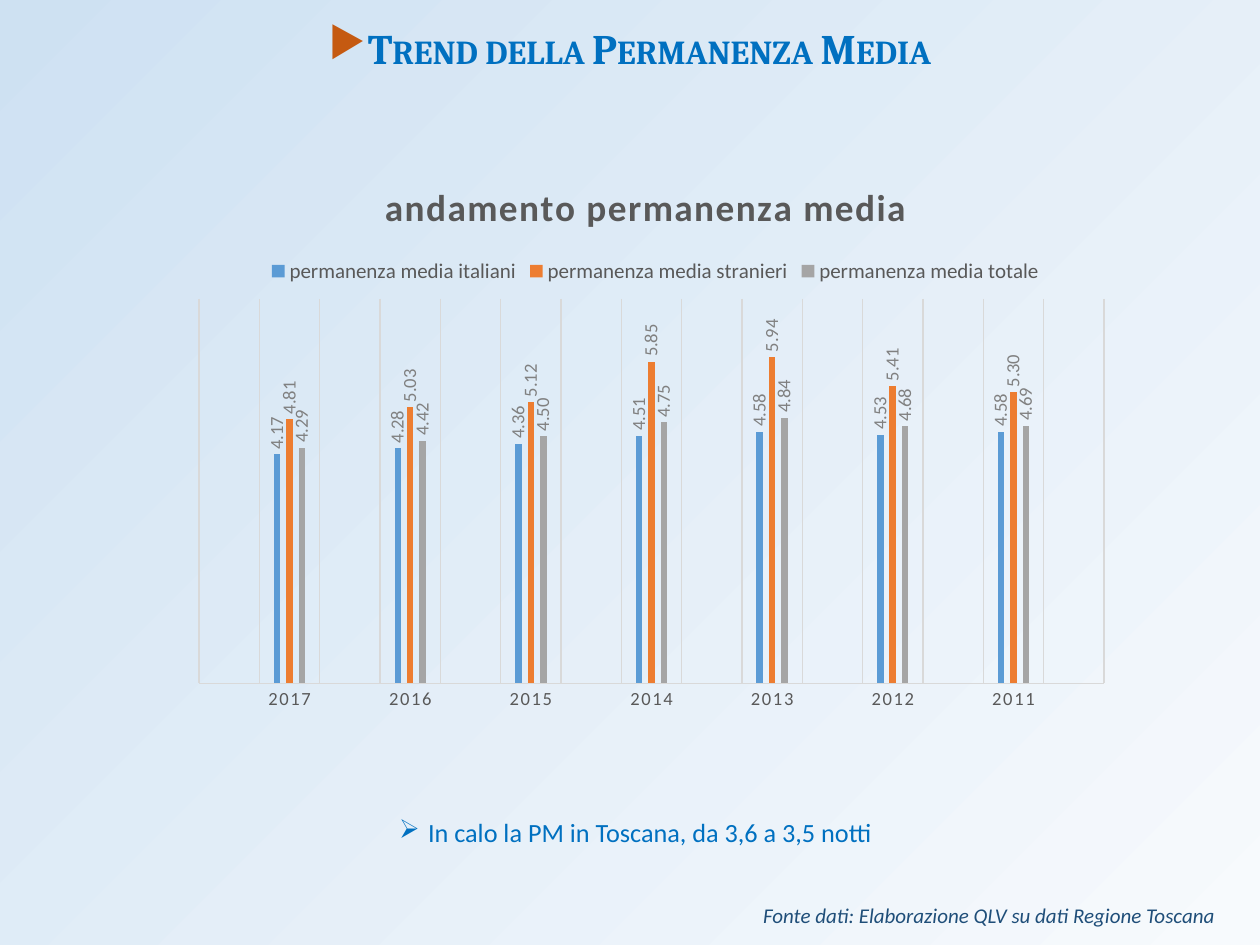
from lxml import etree
from pptx import Presentation
from pptx.chart.data import CategoryChartData
from pptx.dml.color import RGBColor
from pptx.enum.chart import XL_CHART_TYPE, XL_LABEL_POSITION, XL_LEGEND_POSITION, XL_TICK_MARK
from pptx.enum.text import MSO_AUTO_SIZE, PP_ALIGN
from pptx.oxml.ns import qn
from pptx.util import Pt

COLUMN_CLUSTERED = XL_CHART_TYPE.COLUMN_CLUSTERED
OUTSIDE_END = XL_LABEL_POSITION.OUTSIDE_END
LEGEND_TOP = XL_LEGEND_POSITION.TOP
NO_TICK = XL_TICK_MARK.NONE
GROW = MSO_AUTO_SIZE.SHAPE_TO_FIT_TEXT
CENTER = PP_ALIGN.CENTER

BLACK = RGBColor(0x00, 0x00, 0x00)
BLUE = RGBColor(0x00, 0x70, 0xC0)
NAVY = RGBColor(0x1F, 0x4E, 0x79)
RUST = RGBColor(0xC5, 0x5A, 0x11)
PALE = RGBColor(0xF7, 0xFA, 0xFD)
SKY = RGBColor(0xCE, 0xE1, 0xF2)
DARK_GRAY = RGBColor(0x59, 0x59, 0x59)
LABEL_GRAY = RGBColor(0x80, 0x80, 0x80)
LINE_GRAY = RGBColor(0xD9, 0xD9, 0xD9)

YEARS = range(2017, 2010, -1)
STAYS = [
    ("permanenza media italiani", RGBColor(0x5B, 0x9B, 0xD5),
     [4.17, 4.28, 4.36, 4.51, 4.58, 4.53, 4.58]),
    ("permanenza media stranieri", RGBColor(0xED, 0x7D, 0x31),
     [4.81, 5.03, 5.12, 5.85, 5.94, 5.41, 5.30]),
    ("permanenza media totale", RGBColor(0xA5, 0xA5, 0xA5),
     [4.29, 4.42, 4.50, 4.75, 4.84, 4.68, 4.69]),
]


def style_font(font, size, color, name="Calibri", bold=False, italic=False):
    font.name = name
    font.size = Pt(size)
    font.color.rgb = color
    font.bold = bold
    font.italic = italic


def add_bullet(paragraph, character, color):
    properties = paragraph._p.get_or_add_pPr()
    properties.set("marL", str(Pt(16.5)))
    properties.set("indent", str(-Pt(16.5)))
    bullet_color = etree.SubElement(properties, qn("a:buClr"))
    etree.SubElement(bullet_color, qn("a:srgbClr"), val=str(color))
    etree.SubElement(properties, qn("a:buChar"), char=character)


def add_text(slide, box, text):
    shape = slide.shapes.add_textbox(*map(Pt, box))
    text_frame = shape.text_frame
    text_frame.word_wrap = True
    text_frame.auto_size = GROW
    text_frame.text = text
    paragraph = text_frame.paragraphs[0]
    return paragraph, paragraph.runs[0]


def add_heading(slide, box):
    paragraph, run = add_text(slide, box, "Trend della Permanenza Media")
    paragraph.alignment = CENTER
    style_font(run.font, 24, BLUE, "Cambria", bold=True)
    run._r.get_or_add_rPr().set("cap", "small")
    add_bullet(paragraph, "▶", RUST)


def add_finding(slide, box):
    paragraph, run = add_text(slide, box, "In calo la PM in Toscana, da 3,6 a 3,5 notti")
    style_font(run.font, 15, BLUE)
    add_bullet(paragraph, "➢", BLUE)


def add_source_note(slide, box):
    run = add_text(slide, box, "Fonte dati: Elaborazione QLV su dati Regione Toscana")[1]
    style_font(run.font, 12, NAVY, italic=True)


def spread(items, filler):
    spaced = [filler]
    for item in items:
        spaced += [item, filler]
    return spaced


def set_layout(element, **fractions):
    for old_layout in element.findall(qn("c:layout")):
        element.remove(old_layout)
    layout = etree.Element(qn("c:layout"))
    manual = etree.SubElement(layout, qn("c:manualLayout"))
    overlay = element.find(qn("c:overlay"))
    if overlay is None:
        etree.SubElement(manual, qn("c:layoutTarget"), val="inner")
        element.insert(0, layout)
    else:
        overlay.addprevious(layout)
    for side in ("x", "y"):
        etree.SubElement(manual, qn(f"c:{side}Mode"), val="edge")
    for side, fraction in fractions.items():
        etree.SubElement(manual, qn(f"c:{side}"), val=str(fraction))


def style_title(chart):
    title = chart.chart_title
    title.include_in_layout = False
    title.text_frame.text = "andamento permanenza media"
    run = title.text_frame.paragraphs[0].runs[0]
    style_font(run.font, 21.3, DARK_GRAY, bold=True)
    run._r.get_or_add_rPr().set("spc", "100")
    set_layout(title._element, x=0.21, y=0.03)


def style_legend(chart):
    chart.has_legend = True
    legend = chart.legend
    legend.position = LEGEND_TOP
    legend.include_in_layout = False
    style_font(legend.font, 12, DARK_GRAY)
    set_layout(legend._element, x=0.09, y=0.17)


def style_axes(chart):
    value_axis = chart.value_axis
    value_axis.minimum_scale = 0
    value_axis.maximum_scale = 7
    value_axis.has_major_gridlines = False
    value_axis.visible = False
    year_axis = chart.category_axis
    year_axis.major_tick_mark = NO_TICK
    year_axis.minor_tick_mark = NO_TICK
    year_axis.has_major_gridlines = True
    for line in (year_axis.format.line, year_axis.major_gridlines.format.line):
        line.color.rgb = LINE_GRAY
        line.width = Pt(0.75)
    style_font(year_axis.tick_labels.font, 10.6, DARK_GRAY)
    for properties in year_axis._element.iter(qn("a:defRPr")):
        properties.set("spc", "100")


def style_series(series, color):
    series.format.fill.solid()
    series.format.fill.fore_color.rgb = color
    series.invert_if_negative = False
    labels = series.data_labels
    labels.show_value = True
    labels.position = OUTSIDE_END
    labels.number_format = "0.00"
    labels.number_format_is_linked = False
    style_font(labels.font, 10.6, LABEL_GRAY)
    for body in labels._element.iter(qn("a:bodyPr")):
        body.set("rot", "-5400000")
        body.set("vert", "horz")


def add_stay_chart(slide, box):
    data = CategoryChartData(number_format="0.00")
    data.categories = spread(map(str, YEARS), "")
    for name, _, values in STAYS:
        data.add_series(name, spread(values, None))
    chart = slide.shapes.add_chart(COLUMN_CLUSTERED, *map(Pt, box), data).chart
    style_font(chart.font, 10, BLACK)
    style_title(chart)
    style_legend(chart)
    style_axes(chart)
    plot = chart.plots[0]
    plot.gap_width = 444
    plot.overlap = -90
    plot.vary_by_categories = False
    for series, (_, color, _) in zip(plot.series, STAYS):
        style_series(series, color)
    set_layout(chart._chartSpace.chart.plotArea, x=0.02, y=0.25, w=0.96, h=0.68)


def set_background(slide):
    fill = slide.background.fill
    fill.gradient()
    fill.gradient_angle = 135
    for stop, position, color in zip(fill.gradient_stops, (0, 1), (PALE, SKY)):
        stop.position = position
        stop.color.rgb = color


def main():
    presentation = Presentation()
    presentation.slide_width = Pt(720)
    presentation.slide_height = Pt(540)
    slide = presentation.slides.add_slide(presentation.slide_layouts[6])
    set_background(slide)
    add_heading(slide, (0, 9.4, 720, 36))
    add_finding(slide, (221, 463, 303, 25.2))
    add_source_note(slide, (429, 512, 296, 21.6))
    add_stay_chart(slide, (103, 90, 538.6, 323.3))
    presentation.save("out.pptx")


if __name__ == "__main__":
    main()
